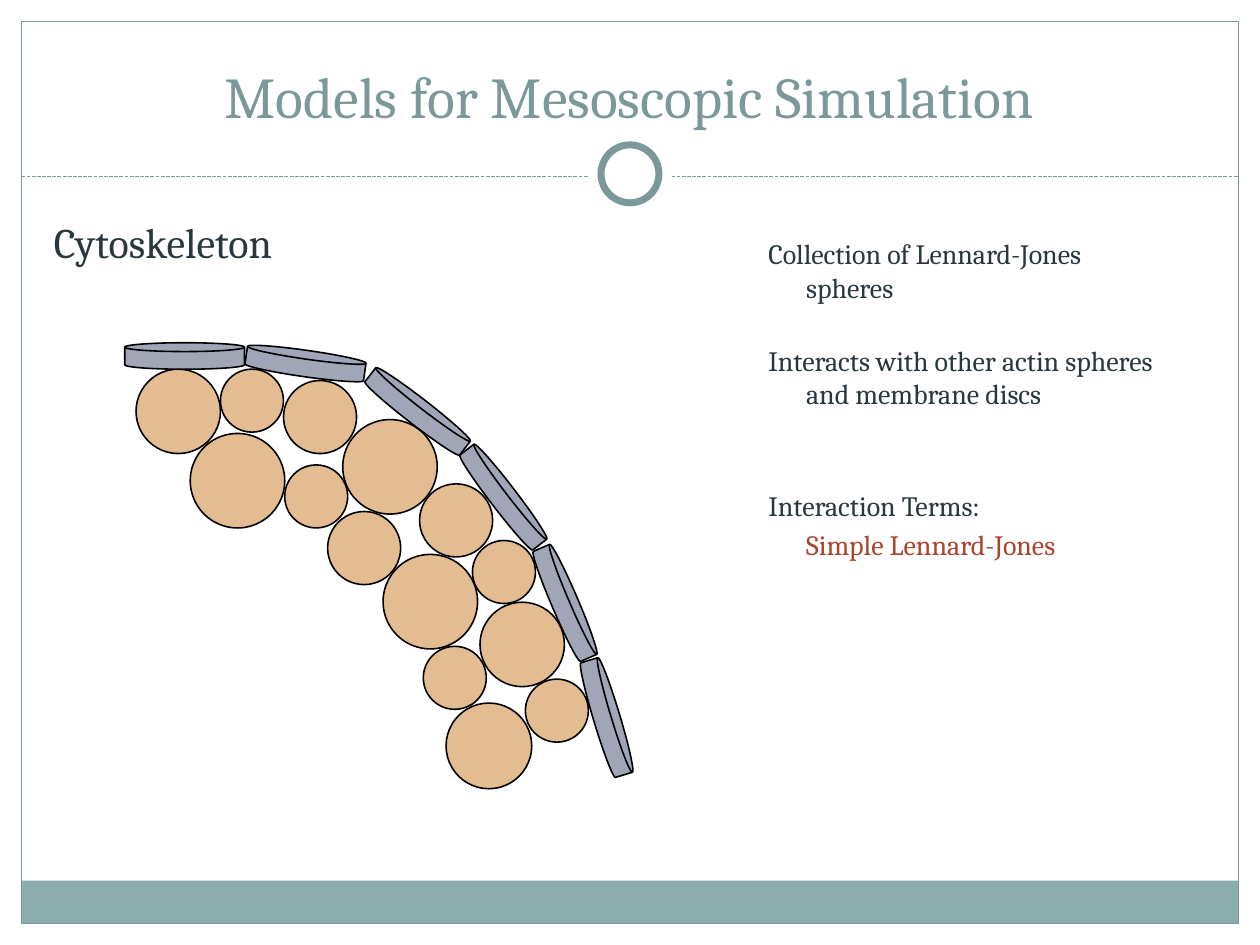
from lxml import etree
from pptx import Presentation
from pptx import util as u
from pptx.dml.color import RGBColor
from pptx.enum import dml, shapes, text
from pptx.oxml import ns

FONT = "Cambria"
TEAL, BAND, INK, RED = "7C999A", "8CADAE", "2A373D", "A9432B"
WHITE, BLACK, SPHERE, DISC = "FFFFFF", "000000", "E3BC92", "A0A5B8"
KIND = shapes.MSO_SHAPE
HANG = 0.3

SPHERES = [
    (0.08, 0.93, 0.67), (0.75, 0.93, 0.5), (1.25, 1.02, 0.58),
    (0.51, 1.44, 0.75), (1.26, 1.69, 0.5), (1.72, 1.33, 0.75),
    (1.6, 2.06, 0.58), (2.33, 1.84, 0.58), (2.04, 2.4, 0.75),
    (2.75, 2.29, 0.5), (2.81, 2.78, 0.67), (2.36, 3.13, 0.5),
    (3.17, 3.39, 0.5), (2.54, 3.58, 0.68),
]
DISC_SIZE = (0.21, 0.95)
DISCS = [
    (3.71, 3.22, 343.2), (3.38, 2.31, 336.8), (2.89, 1.47, 322.5),
    (2.21, 0.79, 307.8), (1.32, 0.41, 278.1), (0.36, 0.35, 270),
]


def apply(target, values):
    """Set every attribute named in a dict of format values."""
    for name, value in values.items():
        setattr(target, name, value)


def paint(color_format, color):
    """Give a colour format the colour of a hex string."""
    color_format.rgb = RGBColor.from_string(color)


def add_shape(page, kind, box, fill=None, line=None, width=0.75):
    """Add a flat preset shape with an optional fill and outline."""
    shape = page.shapes.add_shape(kind, *map(u.Inches, box))
    shape.shadow.inherit = False
    if fill:
        shape.fill.solid()
        paint(shape.fill.fore_color, fill)
    else:
        shape.fill.background()
    if line:
        paint(shape.line.color, line)
        shape.line.width = u.Pt(width)
    else:
        shape.line.fill.background()
    return shape


def add_span(para, words, size, color):
    """Add one formatted run to a paragraph."""
    span = para.add_run()
    span.text = words
    apply(span.font, {"name": FONT, "size": u.Pt(size)})
    paint(span.font.color, color)


def add_frame(page, box):
    """Draw the border, bottom band, dashed rule and ring in a box."""
    left, top, width, height = box
    band = 0.34
    add_shape(page, KIND.RECTANGLE, (left, top + height - band, width, band), BAND)
    add_shape(page, KIND.RECTANGLE, box, line=TEAL)
    rule_y = top + 1.23
    rule = page.shapes.add_connector(
        shapes.MSO_CONNECTOR.STRAIGHT,
        *map(u.Inches, (left, rule_y, left + width, rule_y)))
    apply(rule.line, {"width": u.Pt(0.75), "dash_style": dml.MSO_LINE.SQUARE_DOT})
    paint(rule.line.color, TEAL)
    etree.SubElement(rule.element.spPr, ns.qn("a:effectLst"))
    center_x, center_y = left + width / 2, top + 1.21
    for size, line in ((0.67, None), (0.46, TEAL)):
        ring = (center_x - size / 2, center_y - size / 2, size, size)
        add_shape(page, KIND.OVAL, ring, WHITE, line, 4)


def add_title(page, box, words):
    """Place the title placeholder in a box and fill it."""
    title = page.shapes.title
    apply(title, dict(zip(("left", "top", "width", "height"), map(u.Inches, box))))
    apply(title.text_frame, {
        "vertical_anchor": text.MSO_ANCHOR.BOTTOM,
        "auto_size": text.MSO_AUTO_SIZE.NONE, "word_wrap": True})
    para = title.text_frame.paragraphs[0]
    para.alignment = text.PP_ALIGN.CENTER
    add_span(para, words, 33, TEAL)


def add_notes(page, box, size, lines):
    """Write lines of (words, colour, first-line indent, space before) in a box."""
    frame = page.shapes.add_textbox(*map(u.Inches, box)).text_frame
    frame.word_wrap = True
    for number, (words, color, indent, space) in enumerate(lines):
        para = frame.add_paragraph() if number else frame.paragraphs[0]
        para.space_before = u.Pt(space)
        properties = para._p.get_or_add_pPr()
        properties.set("marL", str(u.Inches(HANG)))
        properties.set("indent", str(u.Inches(indent)))
        add_span(para, words, size, color)


def add_membrane(page, origin):
    """Draw the actin spheres and the arc of membrane discs from an origin."""
    left, top = origin
    for x, y, size in SPHERES:
        add_shape(page, KIND.OVAL, (left + x, top + y, size, size), SPHERE, BLACK, 0.9)
    for x, y, angle in DISCS:
        disc = add_shape(page, KIND.FLOWCHART_DIRECT_ACCESS_STORAGE,
                         (left + x, top + y, *DISC_SIZE), DISC, BLACK, 0.9)
        disc.rotation = angle


def main():
    """Build the slide and save the deck."""
    deck = Presentation()
    apply(deck, {"slide_width": u.Inches(10), "slide_height": u.Inches(7.5)})
    page = deck.slides.add_slide(deck.slide_layouts[5])
    add_frame(page, (0.17, 0.17, 9.66, 7.16))
    add_title(page, (0.33, 0.25, 9.33, 0.83), "Models for Mesoscopic Simulation")
    add_notes(page, (0.33, 1.67, 3.42, 0.5), 24, [("Cytoskeleton", INK, -HANG, 0)])
    add_notes(page, (6, 3.83, 2.83, 0.83), 16, [
        ("Interaction Terms:", INK, -HANG, 0),
        ("Simple Lennard-Jones", RED, 0, 3.2)])
    add_notes(page, (6, 1.83, 3.33, 1.92), 16, [
        ("Collection of Lennard-Jones spheres", INK, -HANG, 0),
        ("Interacts with other actin spheres and membrane discs", INK, -HANG, 22.5)])
    add_membrane(page, (1, 2))
    deck.save("out.pptx")


if __name__ == "__main__":
    main()
